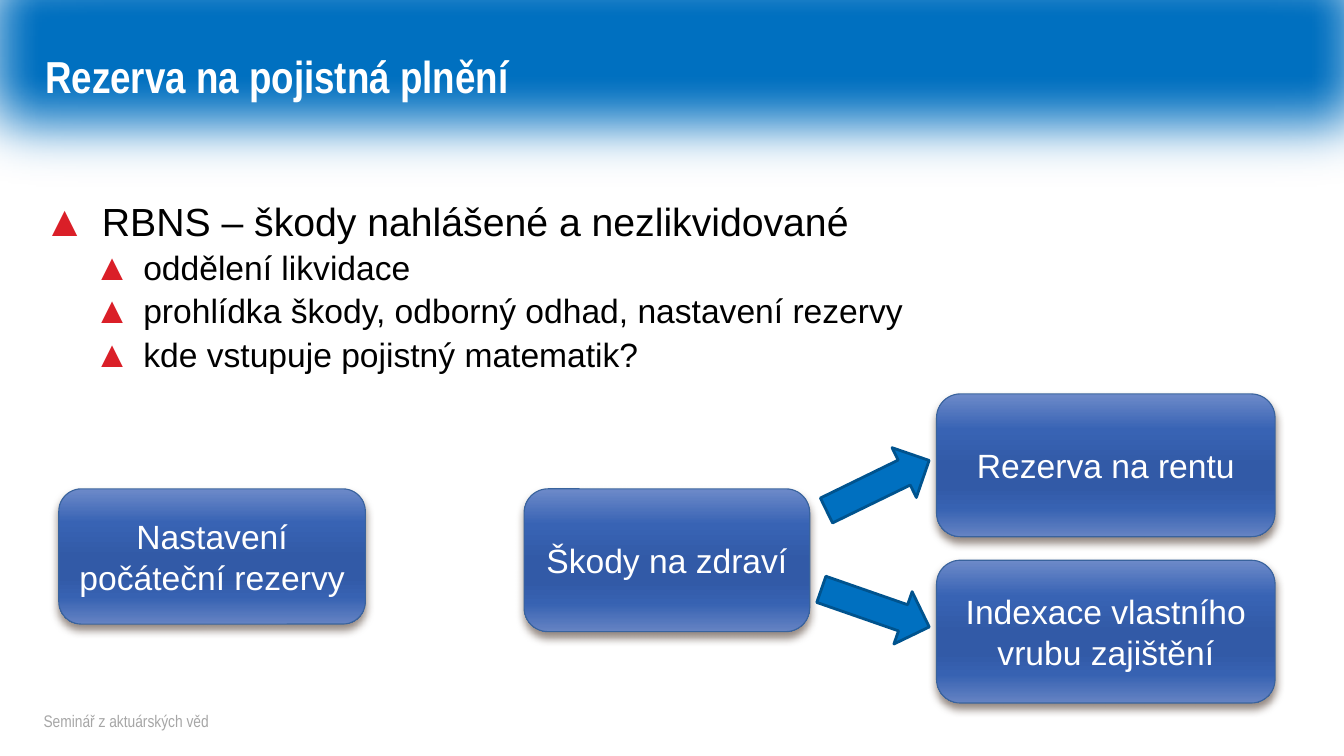
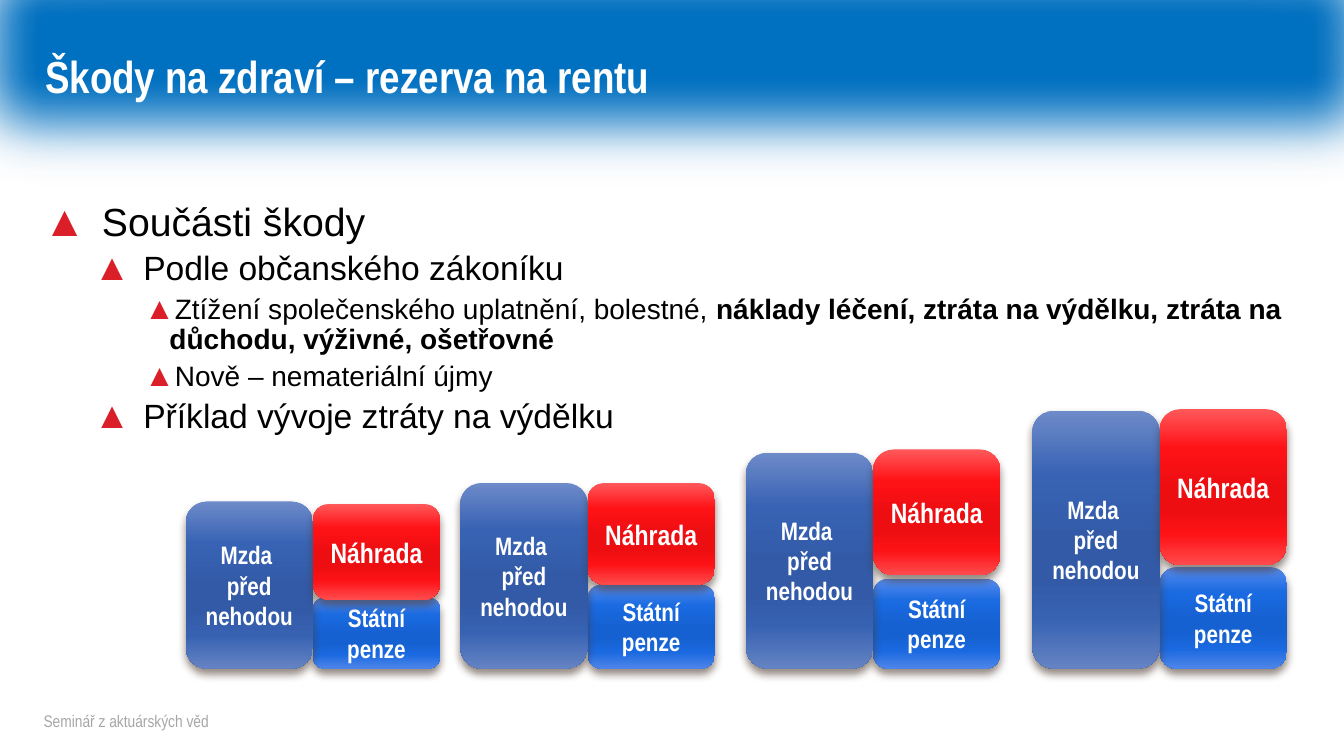
from lxml import etree
from pptx import Presentation
from pptx.dml.color import RGBColor
from pptx.enum.shapes import MSO_SHAPE
from pptx.enum.text import MSO_ANCHOR, PP_ALIGN
from pptx.oxml.ns import qn
from pptx.util import Inches, Pt

RECT, ROUNDED, ARROW = MSO_SHAPE.RECTANGLE, MSO_SHAPE.ROUNDED_RECTANGLE, MSO_SHAPE.RIGHT_ARROW
MIDDLE, TOP = MSO_ANCHOR.MIDDLE, MSO_ANCHOR.TOP
LEFT, CENTER = PP_ALIGN.LEFT, PP_ALIGN.CENTER
COLUMNS, ROWS = 160, 90

COLORS = {
    "band": "0070C0", "arrow_edge": "00538E", "white": "FFFFFF", "black": "000000",
    "footer": "A6A6A6", "bullet": "DA1F28", "box_edge": "39639D", "shadow": "4E3B30",
}
STOPS = (0, 25, 50, 65, 80, 100)
GRADIENTS = {
    "navy": ("6D8AC9", "3863B4", "325AA7", "325AA7", "3762B2", "6583C3"),
    "blue": ("578CEE", "1A6AE1", "1661D2", "1661D2", "1A69E0", "4E85E9"),
    "red": ("FF595B", "FF1216", "ED0E12", "ED0E12", "FD1216", "FF4B4D"),
}
FONTS = {
    "title": {"name": "Arial Narrow", "size": Pt(32), "bold": True},
    "footer": {"name": "Arial Narrow", "size": Pt(12)},
    "box": {"name": "Arial", "size": Pt(24)},
    "bar": {"name": "Arial Narrow", "size": Pt(18), "bold": True},
    "big_bar": {"name": "Arial Narrow", "size": Pt(20), "bold": True},
}
LEVELS = [
    {"size": 28, "margin": 0.58, "indent": -0.58, "before": 10},
    {"size": 24, "margin": 0.99, "indent": -0.49, "before": 5},
    {"size": 20, "margin": 1.25, "indent": -0.25, "before": 5},
]
BAR_INSETS = {"margin_left": Inches(0.04), "margin_right": Inches(0.04)}


def apply(target, values):
    """Set every attribute in values on target."""
    for name, value in values.items():
        setattr(target, name, value)


class Deck:
    """Holds the presentation, its style and the current slide."""

    def __init__(self):
        """Open an empty widescreen presentation."""
        self.presentation = Presentation()
        apply(self.presentation, {"slide_width": Inches(13.333), "slide_height": Inches(7.5)})
        self.slide = None

    def place(self, column, row, columns, rows):
        """Turn grid units into left, top, width and height."""
        column_width = self.presentation.slide_width / COLUMNS
        row_height = self.presentation.slide_height / ROWS
        return (round(column * column_width), round(row * row_height),
                round(columns * column_width), round(rows * row_height))

    def new_slide(self, title):
        """Start a slide with the shared band, title and footer."""
        self.slide = self.presentation.slides.add_slide(self.presentation.slide_layouts[6])
        band = self.shape(RECT, (-11, -13.8, 182.9, 38.6), "band")
        self.effect(band, "softEdge", rad=Pt(50))
        self.label((4.2, 2, 132.4, 14.9), title, "title", "white", 0.9)
        self.label((4, 83.4, 103, 4.8), "Seminář z aktuárských věd", "footer", "footer")

    def effect(self, shape, tag, **values):
        """Add one effect to a shape and return its element."""
        effects = shape.element.spPr.find(qn("a:effectLst"))
        return etree.SubElement(effects, qn(f"a:{tag}"), {k: str(v) for k, v in values.items()})

    def shape(self, kind, area, fill=None, edge=None, width=1.0):
        """Draw a preset shape without shadow."""
        shape = self.slide.shapes.add_shape(kind, *self.place(*area))
        shape.shadow.inherit = False
        if fill:
            shape.fill.solid()
            shape.fill.fore_color.rgb = RGBColor.from_string(COLORS[fill])
        if edge:
            shape.line.color.rgb = RGBColor.from_string(COLORS[edge])
            shape.line.width = Pt(width)
        else:
            shape.line.fill.background()
        return shape

    def fill_text(self, frame, lines, font, color, align=LEFT, spacing=None):
        """Fill a text frame with paragraphs of one style."""
        apply(frame, {"word_wrap": True, "vertical_anchor": MIDDLE})
        for number, line in enumerate(lines):
            paragraph = frame.add_paragraph() if number else frame.paragraphs[0]
            apply(paragraph, {"alignment": align, "line_spacing": spacing})
            self.add_text(paragraph, line, FONTS[font], color)

    def add_text(self, paragraph, text, font, color):
        """Add one formatted run."""
        run = paragraph.add_run()
        run.text = text
        apply(run.font, font)
        run.font.color.rgb = RGBColor.from_string(COLORS[color])

    def label(self, area, text, font, color, spacing=None):
        """Place a single line of text."""
        frame = self.slide.shapes.add_textbox(*self.place(*area)).text_frame
        self.fill_text(frame, [text], font, color, spacing=spacing)

    def glossy_box(self, area, lines, gradient, font="box", edge=None, insets=None):
        """Draw a rounded gradient box with a soft shadow and centred text."""
        box = self.shape(ROUNDED, area, edge=edge, width=0.79)
        box.fill.gradient()
        box.fill.gradient_angle = 270
        stops = box.element.spPr.find(f".//{qn('a:gsLst')}")
        for stop in list(stops):
            stops.remove(stop)
        for position, color in zip(STOPS, GRADIENTS[gradient]):
            stop = etree.SubElement(stops, qn("a:gs"), pos=str(position * 1000))
            etree.SubElement(stop, qn("a:srgbClr"), val=color)
        shadow = self.effect(box, "outerShdw", blurRad=Pt(6), dist=Pt(4), dir=5400000,
                             algn="ctr", rotWithShape=0)
        tint = etree.SubElement(shadow, qn("a:srgbClr"), val=COLORS["shadow"])
        etree.SubElement(tint, qn("a:alpha"), val="60000")
        apply(box.text_frame, insets or {})
        self.fill_text(box.text_frame, lines, font, "white", CENTER)

    def arrow(self, area, rotation):
        """Draw a rotated block arrow."""
        self.shape(ARROW, area, "band", "arrow_edge", 2).rotation = rotation

    def bullets(self, items):
        """Set the body from (level, plain text, bold text) items."""
        frame = self.slide.shapes.add_textbox(*self.place(4, 23.5, 154, 59.3)).text_frame
        apply(frame, {"word_wrap": True, "vertical_anchor": TOP})
        for number, (level, *texts) in enumerate(items):
            style = LEVELS[level]
            paragraph = frame.add_paragraph() if number else frame.paragraphs[0]
            apply(paragraph, {"level": level, "line_spacing": 0.9,
                              "space_before": Pt(style["before"] if number else 0)})
            properties = paragraph._p.get_or_add_pPr()
            properties.set("marL", str(Inches(style["margin"])))
            properties.set("indent", str(Inches(style["indent"])))
            tint = etree.SubElement(properties, qn("a:buClr"))
            etree.SubElement(tint, qn("a:srgbClr"), val=COLORS["bullet"])
            etree.SubElement(properties, qn("a:buSzPct"), val="110000")
            etree.SubElement(properties, qn("a:buFont"), typeface="Arial")
            etree.SubElement(properties, qn("a:buChar"), char="▲")
            for text, bold in zip(texts, (False, True)):
                font = {"name": "Arial", "size": Pt(style["size"]), "bold": bold}
                self.add_text(paragraph, text, font, "black")

    def income_group(self, column, wage, pension, top, compensation):
        """Draw wage beside pension and compensation on the shared baseline."""
        width, baseline = 15.15, 79.6
        bars = [
            (column + width, baseline - pension, pension, ["Státní penze"], "blue", "bar"),
            (column, baseline - wage, wage, ["Mzda ", "před nehodou"], "navy", "bar"),
            (column + width, top, compensation, ["Náhrada"], "red", "big_bar"),
        ]
        for left, row, height, lines, gradient, font in bars:
            self.glossy_box((left, row, width, height), lines, gradient, font, insets=BAR_INSETS)


def main():
    """Build both slides and save them."""
    deck = Deck()

    deck.new_slide("Rezerva na pojistná plnění")
    deck.bullets([
        (0, "RBNS – škody nahlášené a nezlikvidované"),
        (1, "oddělení likvidace"),
        (1, "prohlídka škody, odborný odhad, nastavení rezervy"),
        (1, "kde vstupuje pojistný matematik?"),
    ])
    for area, text in [
        ((7, 58.2, 36.5, 16.1), "Nastavení počáteční rezervy"),
        ((62.4, 58.2, 34, 17), "Škody na zdraví"),
        ((111.5, 46.9, 40.3, 17), "Rezerva na rentu"),
        ((111.5, 66.7, 40.3, 17), "Indexace vlastního vrubu zajištění"),
    ]:
        deck.glossy_box(area, [text], "navy", edge="box_edge")
    deck.arrow((97.7, 54.5, 13.6, 6.6), 334)
    deck.arrow((97.4, 69.1, 13.6, 6.6), 19.2)

    deck.new_slide("Škody na zdraví – rezerva na rentu")
    deck.bullets([
        (0, "Součásti škody"),
        (1, "Podle občanského zákoníku"),
        (2, "Ztížení společenského uplatnění, bolestné, ",
         "náklady léčení, ztráta na výdělku, ztráta na důchodu, výživné, ošetřovné"),
        (2, "Nově – nemateriální újmy"),
        (1, "Příklad vývoje ztráty na výdělku"),
    ])
    for group in [
        (22.1, 19.9, 8.5, 60, 11.4),
        (54.8, 22.1, 10, 57.5, 12.1),
        (88.8, 25.7, 10.7, 53.5, 15),
        (122.9, 30.7, 12.1, 48.7, 18.6),
    ]:
        deck.income_group(*group)

    deck.presentation.save("out.pptx")


if __name__ == "__main__":
    main()
